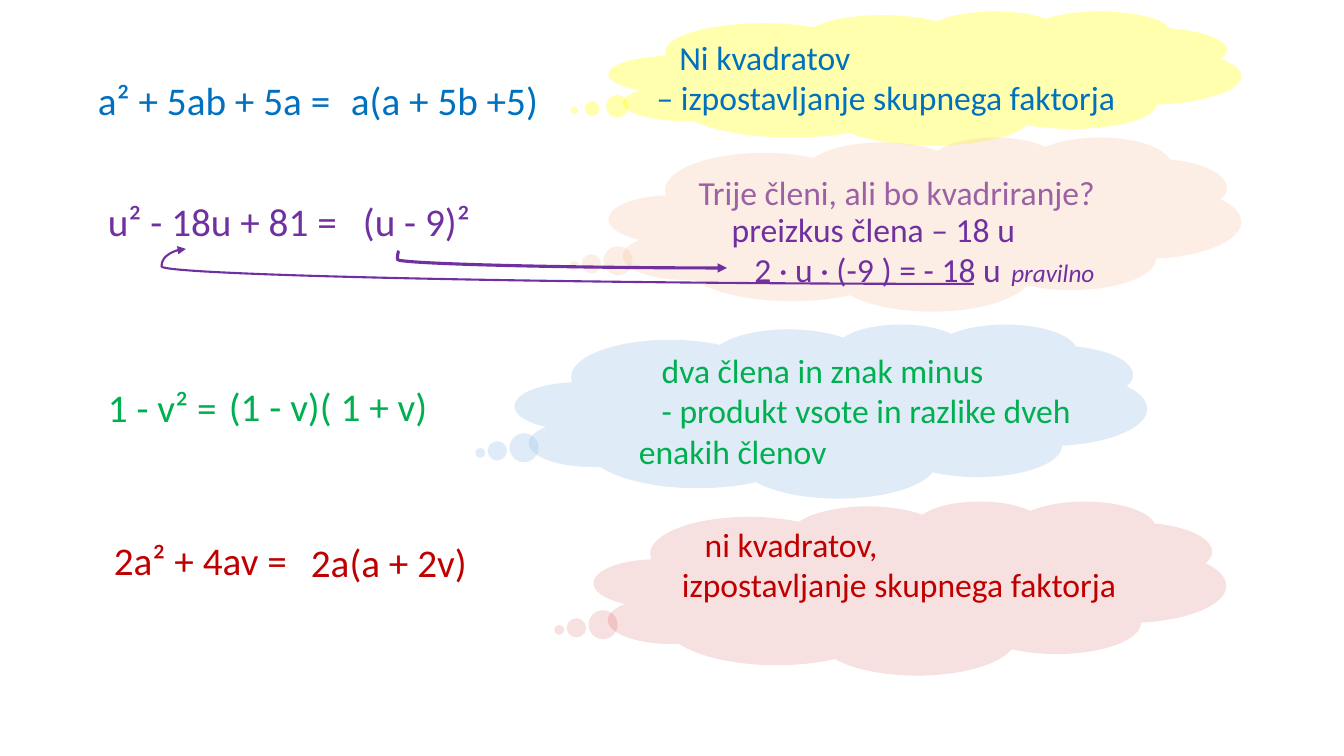
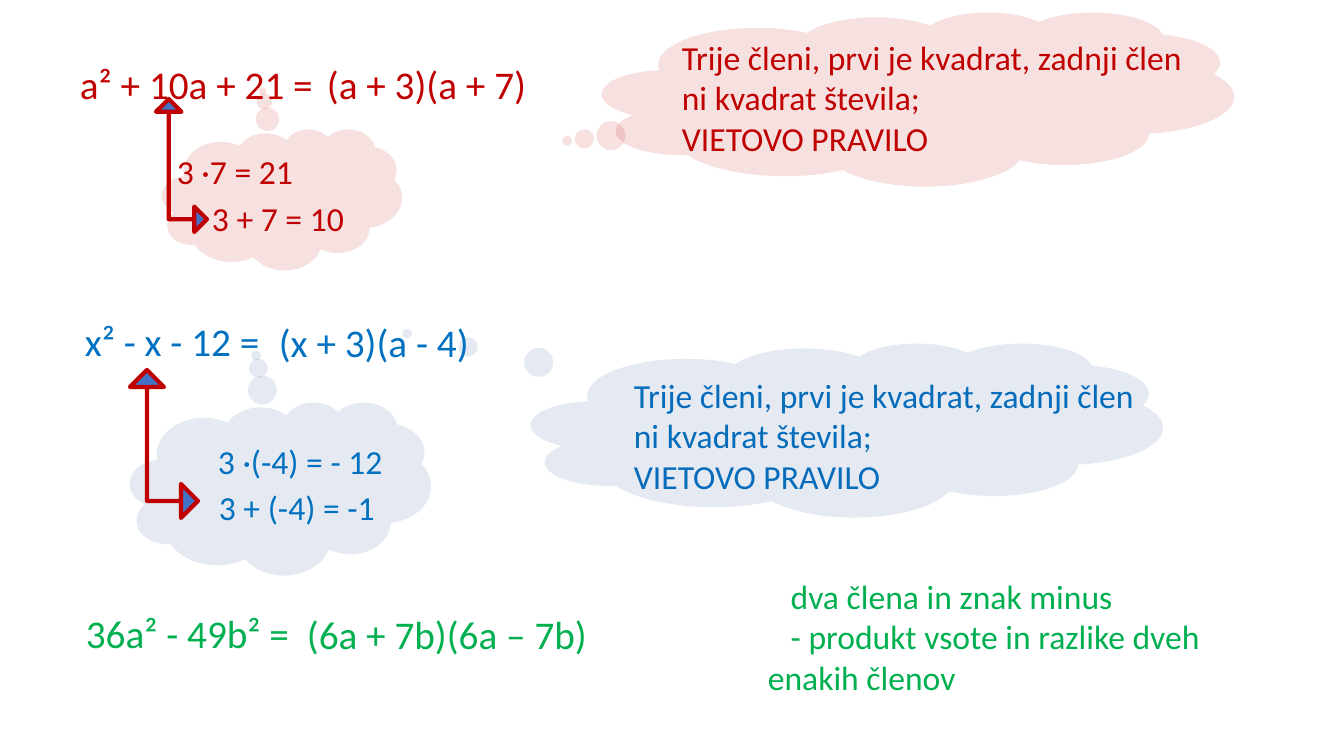
"""Build two slides on factoring expressions, with hints in thought clouds."""
from lxml import etree
from pptx import Presentation
from pptx import util as u
from pptx.dml.color import RGBColor
from pptx.enum import shapes, text
from pptx.oxml import ns

PX = 914400 / 100.8
FONT = "Calibri"
SPACE = 7.6
HINT_W = 541
WIDE = (632, 174)
COLORS = {"blue": "0070C0", "purple": "7030A0", "green": "00B050", "red": "C00000",
          "yellow": "FFFF00", "peach": "F8CBAD", "sky": "9DC3E6", "navy": "2F5597",
          "arrow": "4472C4"}
SIDE = (-0.555, 0.241)
ABOVE = (-0.081, -0.768)
VIETA = [(0, "Trije členi, prvi je kvadrat, zadnji člen ni kvadrat števila;"),
         (0, "VIETOVO PRAVILO")]
SQUARES = [(3, "dva člena in znak minus"),
           (3, "- produkt vsote in razlike dveh enakih členov")]

SLIDES = [
    [
        ("sum", (88, 71, 265), "blue", "a² + 5ab + 5a ="),
        ("cloud", (609, 11, 632, 134), "yellow", 32, SIDE),
        ("hint", (639, 32), "blue",
         [(4, "Ni kvadratov"), (1, "– izpostavljanje skupnega faktorja")]),
        ("sum", (341, 71, 219), "blue", "a(a + 5b +5)"),
        ("sum", (98, 192, 261), "purple", "u² - 18u + 81 ="),
        ("hint", (666, 167), "purple", [(3, "Trije členi, ali bo kvadriranje?")]),
        ("cloud", (609, 137, *WIDE), "peach", 32, SIDE),
        ("sum", (353, 192, 138), "purple", "(u - 9)²"),
        ("hint", (699, 204), "purple",
         [(3, "preizkus člena – 18 u"), (6, "2 · u · (-9 ) = - 18 u", "pravilno")]),
        ("sum", (98, 378, 172), "green", "1 - v² ="),
        ("cloud", (515, 324, *WIDE), "sky", 32, SIDE),
        ("hint", (629, 345), "green", SQUARES),
        ("sum", (219, 377, 240), "green", "(1 - v)( 1 + v)"),
        ("sum", (104, 531, 205), "red", "2a² + 4av ="),
        ("cloud", (594, 501, *WIDE), "red", 12, SIDE),
        ("hint", (672, 519), "red",
         [(3, "ni kvadratov,"), (0, "izpostavljanje skupnega faktorja")]),
        ("sum", (301, 533, 206), "red", "2a(a + 2v)"),
        ("curve", (399, 251, 727, 268), "purple", 2.25, -500),
        ("curve", (974, 284, 186, 249), "purple", 1.5, 103100),
    ],
    [
        ("sum", (70, 55, 268), "red", "a² + 10a + 21 ="),
        ("cloud", (602, 12, *WIDE), "red", 12, SIDE),
        ("hint", (672, 32), "red", VIETA),
        ("check", (167, 146, 137), "red", "3 ·7 = 21"),
        ("check", (202, 193, 153), "red", "3 + 7 = 10"),
        ("sum", (317, 55, 232), "red", "(a + 3)(a + 7)"),
        ("cloud", (162, 129, 240, 141), "red", 12, ABOVE),
        ("bend", (156, 99, 51, 133), "red"),
        ("sum", (75, 312, 264), "blue", "x² - x - 12 ="),
        ("hint", (624, 370), "blue", VIETA),
        ("cloud", (531, 343, *WIDE), "navy", 12, (-0.696, -0.554)),
        ("cloud", (130, 402, 301, 173), "navy", 12, ABOVE),
        ("check", (208, 436, 186), "blue", "3 ·(-4) = - 12"),
        ("check", (209, 482, 177), "blue", "3 + (-4) = -1"),
        ("bend", (130, 370, 68, 148), "red"),
        ("sum", (269, 313, 232), "blue", "(x + 3)(a - 4)"),
        ("sum", (76, 604, 301), "green", "36a² - 49b² ="),
        ("hint", (758, 571), "green", SQUARES),
        ("sum", (297, 605, 366), "green", "(6a + 7b)(6a – 7b)"),
    ],
]


def emu(*nums):
    return [round(n * PX) for n in nums]


def rgb(name):
    return RGBColor.from_string(COLORS[name])


def child(node, tag, **attrs):
    return etree.SubElement(node, ns.qn(tag), attrs)


def write(slide, box, color, size, lines):
    frame = slide.shapes.add_textbox(*emu(*box)).text_frame
    frame.word_wrap = True
    frame.auto_size = text.MSO_AUTO_SIZE.NONE
    for i, (lead, line, *note) in enumerate(lines):
        para = frame.add_paragraph() if i else frame.paragraphs[0]
        props = para._p.get_or_add_pPr()
        if lead:
            props.set("indent", str(emu(lead * SPACE)[0]))
        if note:
            tabs = child(props, "a:tabLst")
            child(tabs, "a:tab", pos=str(emu(307)[0]), algn="l")
        para.font.name, para.font.size = FONT, u.Pt(size)
        para.font.color.rgb = rgb(color)
        para.add_run().text = line + ("\t" if note else "")
        for word in note:
            run = para.add_run()
            run.text = word
            run.font.size, run.font.italic = u.Pt(18), True


def add_sum(slide, box, color, line):
    write(slide, (*box, 58), color, 28, [(0, line)])


def add_check(slide, box, color, line):
    write(slide, (*box, 50), color, 24, [(0, line)])


def add_hint(slide, spot, color, lines):
    write(slide, (*spot, HINT_W, 132), color, 24, lines)


def add_form(slide, kind, box, fill, adjust):
    form = slide.shapes.add_shape(kind, *emu(*box))
    form.shadow.inherit = False
    form.fill.solid()
    form.fill.fore_color.rgb = rgb(fill)
    for i, value in enumerate(adjust):
        form.adjustments[i] = value
    return form


def add_cloud(slide, box, fill, alpha, tail):
    cloud = add_form(slide, shapes.MSO_SHAPE.CLOUD_CALLOUT, box, fill, tail)
    cloud.line.fill.background()
    tint = cloud._element.spPr.find(ns.qn("a:solidFill"))[0]
    child(tint, "a:alpha", val=str(alpha * 1000))


def add_bend(slide, box, color):
    bend = add_form(slide, shapes.MSO_SHAPE.LEFT_UP_ARROW, box, "arrow", (0, 0.25, 0.25))
    bend.line.color.rgb, bend.line.width = rgb(color), u.Pt(3)
    bend._element.spPr.find(ns.qn("a:xfrm")).set("flipH", "1")


def add_curve(slide, ends, color, width, adjust):
    curve = slide.shapes.add_connector(shapes.MSO_CONNECTOR.CURVE, *emu(*ends))
    curve.line.color.rgb, curve.line.width = rgb(color), u.Pt(width)
    props = curve._element.spPr
    guides = props.find(ns.qn("a:prstGeom")).find(ns.qn("a:avLst"))
    child(guides, "a:gd", name="adj1", fmla=f"val {adjust}")
    child(props.find(ns.qn("a:ln")), "a:tailEnd", type="triangle")
    child(props, "a:effectLst")


DRAW = {"sum": add_sum, "check": add_check, "hint": add_hint,
        "cloud": add_cloud, "bend": add_bend, "curve": add_curve}


def main():
    deck = Presentation()
    deck.slide_width, deck.slide_height = emu(1344, 756)
    for items in SLIDES:
        slide = deck.slides.add_slide(deck.slide_layouts[6])
        for kind, *parts in items:
            DRAW[kind](slide, *parts)
    deck.save("out.pptx")


if __name__ == "__main__":
    main()
